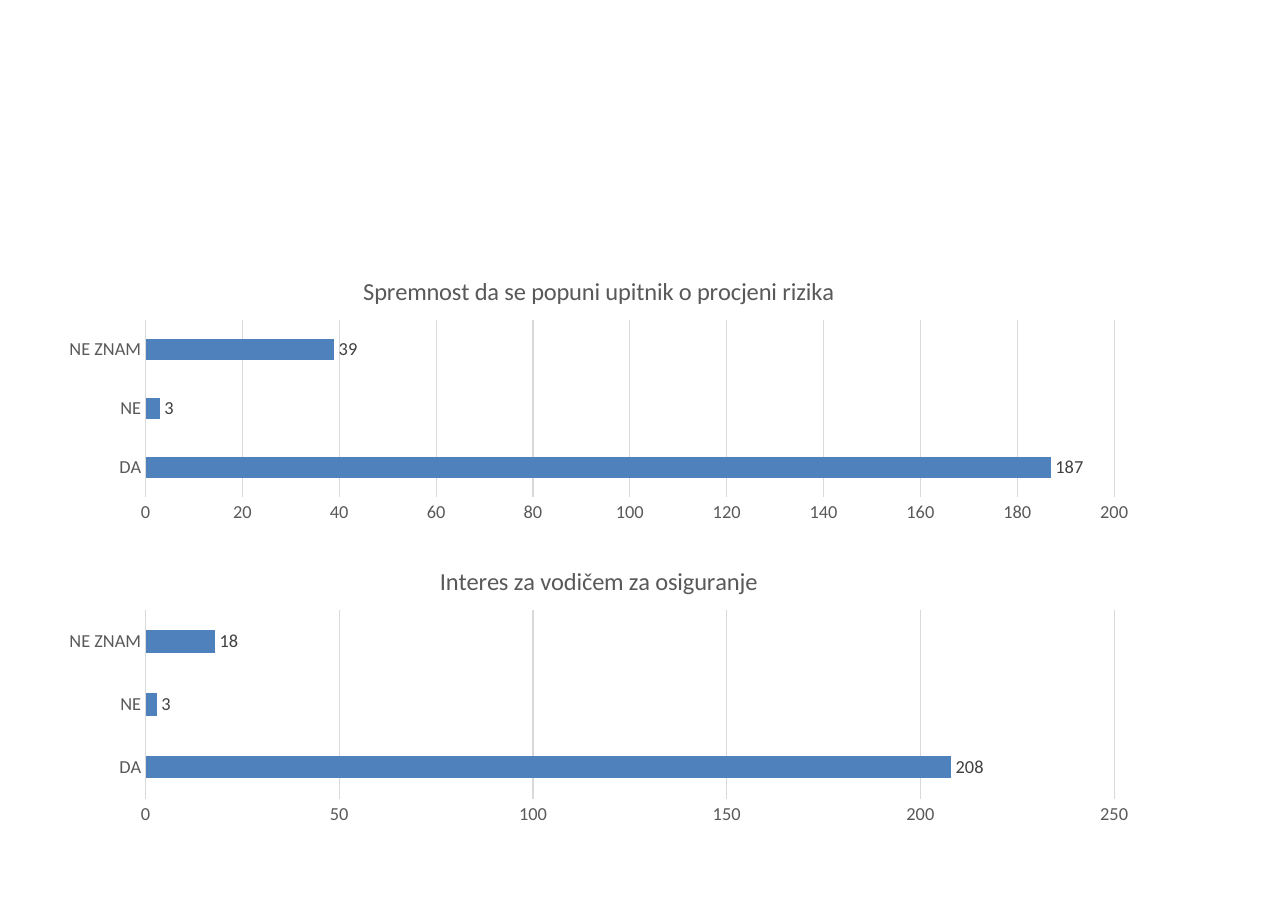
from pptx import Presentation
from pptx import util as u
from pptx.chart.data import CategoryChartData
from pptx.dml.color import RGBColor
from pptx.enum import chart as c
from pptx.oxml import ns, parse_xml

BLUE = RGBColor(0x4F, 0x81, 0xBD)
GRID_GRAY = RGBColor(0xD9, 0xD9, 0xD9)
TEXT_GRAY = RGBColor(0x59, 0x59, 0x59)
LABEL_GRAY = RGBColor(0x40, 0x40, 0x40)
BLACK = RGBColor(0x00, 0x00, 0x00)
WHITE = RGBColor(0xFF, 0xFF, 0xFF)
ANSWERS = ["DA", "NE", "NE ZNAM"]
SURVEY_QUESTIONS = [
    ("Spremnost da se popuni upitnik o procjeni rizika", [187, 3, 39], 2.35, 2.45, 200, 20),
    ("Interes za vodičem za osiguranje", [208, 3, 18], 4.98, 2.56, 250, 50),
]


def set_values(target, values):
    for name, value in values.items():
        setattr(target, name, value)


def style_font(font, size, color):
    set_values(font, {"name": "Calibri", "size": u.Pt(size), "bold": False})
    font.color.rgb = color


def style_line(line):
    line.color.rgb = GRID_GRAY
    line.width = u.Pt(0.75)


def fill_background(chart):
    properties = parse_xml(
        f'<c:spPr {ns.nsdecls("c", "a")}>'
        f'<a:solidFill><a:srgbClr val="{WHITE}"/></a:solidFill>'
        '<a:ln><a:noFill/></a:ln></c:spPr>'
    )
    chart.element.find(ns.qn("c:chart")).addnext(properties)


def style_title(chart, title):
    chart.has_title = True
    chart.chart_title.include_in_layout = False
    paragraph = chart.chart_title.text_frame.paragraphs[0]
    run = paragraph.add_run()
    run.text = title
    style_font(run.font, 16, TEXT_GRAY)


def style_axes(chart, maximum, step):
    for axis in (chart.category_axis, chart.value_axis):
        set_values(axis, {
            "major_tick_mark": c.XL_TICK_MARK.NONE,
            "minor_tick_mark": c.XL_TICK_MARK.NONE,
        })
        style_font(axis.tick_labels.font, 12, TEXT_GRAY)
    chart.category_axis.has_major_gridlines = False
    style_line(chart.category_axis.format.line)
    set_values(chart.value_axis, {
        "minimum_scale": 0,
        "maximum_scale": maximum,
        "major_unit": step,
        "has_major_gridlines": True,
    })
    chart.value_axis.format.line.fill.background()
    style_line(chart.value_axis.major_gridlines.format.line)


def style_bars(plot):
    set_values(plot, {"gap_width": 182, "vary_by_categories": False, "has_data_labels": True})
    set_values(plot.data_labels, {
        "show_value": True,
        "position": c.XL_LABEL_POSITION.OUTSIDE_END,
    })
    style_font(plot.data_labels.font, 12, LABEL_GRAY)
    fill = plot.series[0].format.fill
    fill.solid()
    fill.fore_color.rgb = BLUE


def add_bar_chart(slide, title, values, top, height, maximum, step):
    data = CategoryChartData()
    data.categories = ANSWERS
    data.add_series(title, values)
    chart = slide.shapes.add_chart(
        c.XL_CHART_TYPE.BAR_CLUSTERED,
        u.Inches(0.43), u.Inches(top), u.Inches(10.01), u.Inches(height), data,
    ).chart
    chart.has_legend = False
    style_font(chart.font, 10, BLACK)
    fill_background(chart)
    style_title(chart, title)
    style_axes(chart, maximum, step)
    style_bars(chart.plots[0])


def main():
    presentation = Presentation()
    set_values(presentation, {"slide_width": u.Inches(11.69), "slide_height": u.Inches(8.27)})
    slide = presentation.slides.add_slide(presentation.slide_layouts[6])
    for question in SURVEY_QUESTIONS:
        add_bar_chart(slide, *question)
    presentation.save("out.pptx")


if __name__ == "__main__":
    main()
